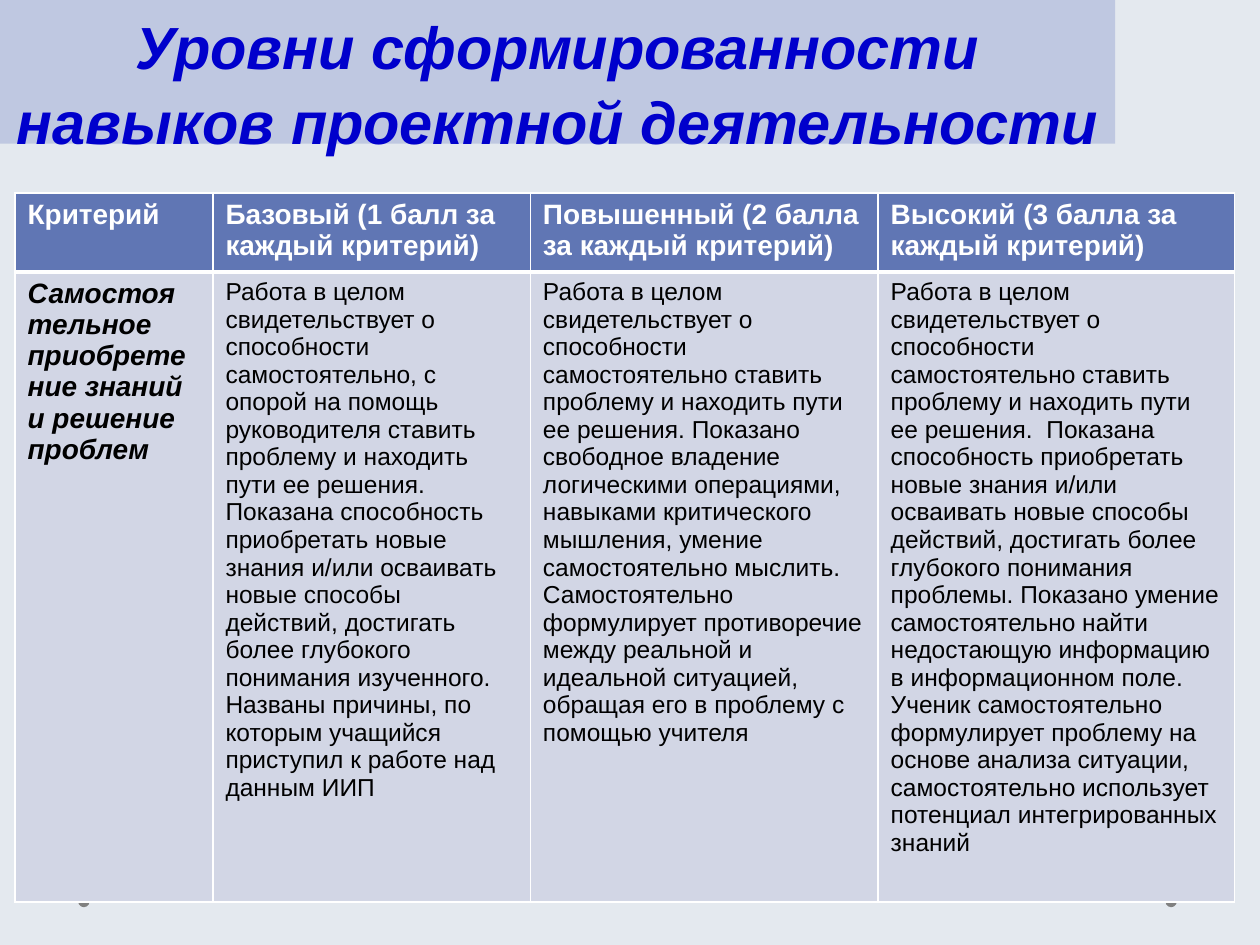
from pptx import Presentation
from pptx.dml.color import RGBColor
from pptx.enum.shapes import MSO_SHAPE as Shape
from pptx.enum.text import MSO_ANCHOR as Anchor, PP_ALIGN as Align
from pptx.oxml.ns import qn
from pptx.util import Inches, Pt
from lxml.etree import SubElement as Sub

FONT = "Arial"
COLORS = {
    "back": "E4E9EF", "dot": "808080", "band": "BFC8E1", "title": "0000CC",
    "head": "6076B4", "body": "D2D6E5", "white": "FFFFFF", "black": "000000",
}
TITLE = "Уровни сформированности навыков проектной деятельности"
COLS = [1.57, 2.52, 2.76, 2.83]
ROWS = [0.63, 5]
HEADS = [
    "Критерий",
    "Базовый (1 балл за каждый критерий)",
    "Повышенный (2 балла за каждый критерий)",
    "Высокий (3 балла за каждый критерий)",
]
LEVELS = [
    "Самостоя\nтельное приобретение знаний и решение проблем",
    "Работа в целом свидетельствует о способности самостоятельно, с опорой "
    "на помощь руководителя ставить проблему и находить пути ее решения. "
    "Показана способность приобретать новые знания и/или осваивать новые "
    "способы действий, достигать более глубокого понимания изученного. "
    "Названы причины, по которым учащийся приступил к работе над данным ИИП",
    "Работа в целом свидетельствует о способности самостоятельно ставить "
    "проблему и находить пути ее решения. Показано свободное владение "
    "логическими операциями, навыками критического мышления, умение "
    "самостоятельно мыслить. Самостоятельно формулирует противоречие между "
    "реальной и идеальной ситуацией, обращая его в проблему с помощью учителя",
    "Работа в целом свидетельствует о способности самостоятельно ставить "
    "проблему и находить пути ее решения.  Показана способность приобретать "
    "новые знания и/или осваивать новые способы действий, достигать более "
    "глубокого понимания проблемы. Показано умение самостоятельно найти "
    "недостающую информацию в информационном поле. Ученик самостоятельно "
    "формулирует проблему на основе анализа ситуации, самостоятельно "
    "использует потенциал интегрированных знаний",
]


def rgb(name):
    return RGBColor.from_string(COLORS[name])


def paint(obj, name):
    obj.fill.solid()
    obj.fill.fore_color.rgb = rgb(name)


def style(frame, size, color, bold=False, slant=False):
    for par in frame.paragraphs:
        font = par.font
        font.name, font.size = FONT, Pt(size)
        font.bold, font.italic = bold, slant
        font.color.rgb = rgb(color)


def add_dot(slide, left):
    dot = slide.shapes.add_shape(
        Shape.OVAL, Inches(left), Inches(7.11), Inches(0.09), Inches(0.09))
    dot.shadow.inherit = False
    paint(dot, "dot")
    dot.line.fill.background()


def set_title(slide):
    box = slide.shapes.title
    box.left, box.top = Inches(0), Inches(0)
    box.width, box.height = Inches(8.85), Inches(1.14)
    paint(box, "band")
    frame = box.text_frame
    frame.text = TITLE
    frame.word_wrap = True
    frame.vertical_anchor = Anchor.TOP
    par = frame.paragraphs[0]
    par.alignment = Align.CENTER
    par.line_spacing = 1.05
    style(frame, 34, "title", bold=True, slant=True)


def add_edges(cell, top, bottom):
    """Draw white cell borders; the XML puts them before the fill."""
    props = cell._tc.get_or_add_tcPr()
    sides = {"a:lnL": 1, "a:lnR": 1, "a:lnT": top, "a:lnB": bottom}
    for i, (tag, width) in enumerate(sides.items()):
        line = Sub(props, qn(tag), w=str(Pt(width)))
        fill = Sub(line, qn("a:solidFill"))
        Sub(fill, qn("a:srgbClr"), val=COLORS["white"])
        props.insert(i, line)


def add_grid(slide):
    grid = slide.shapes.add_table(
        len(ROWS), len(COLS), Inches(0.12), Inches(1.53),
        Inches(sum(COLS)), Inches(sum(ROWS))).table
    for col, width in zip(grid.columns, COLS):
        col.width = Inches(width)
    for row, height in zip(grid.rows, ROWS):
        row.height = Inches(height)

    for c, (head, level) in enumerate(zip(HEADS, LEVELS)):
        # Header row
        cell = grid.cell(0, c)
        cell.text = head
        paint(cell, "head")
        add_edges(cell, 1, 3)
        style(cell.text_frame, 16, "white", bold=True)
        # Level row, with the criterion in the first column
        cell = grid.cell(1, c)
        cell.text = level
        paint(cell, "body")
        add_edges(cell, 3, 1)
        first = c == 0
        style(cell.text_frame, 16 if first else 14, "black", first, first)


def main():
    deck = Presentation()
    deck.slide_width, deck.slide_height = Inches(10), Inches(7.5)
    slide = deck.slides.add_slide(deck.slide_layouts[5])
    paint(slide.background, "back")
    set_title(slide)
    for left in (9.25, 0.62):
        add_dot(slide, left)
    add_grid(slide)
    deck.save("out.pptx")


if __name__ == "__main__":
    main()
